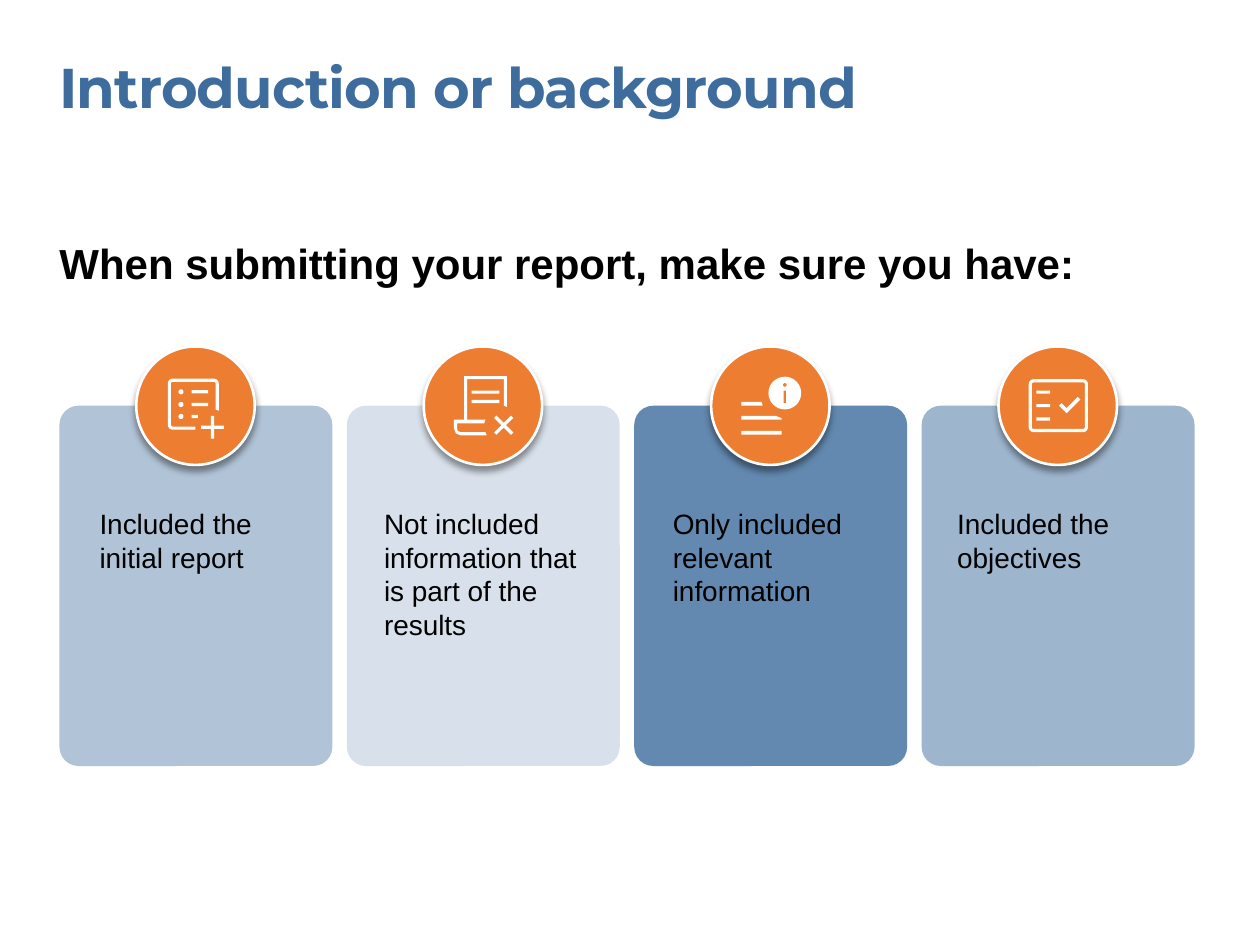
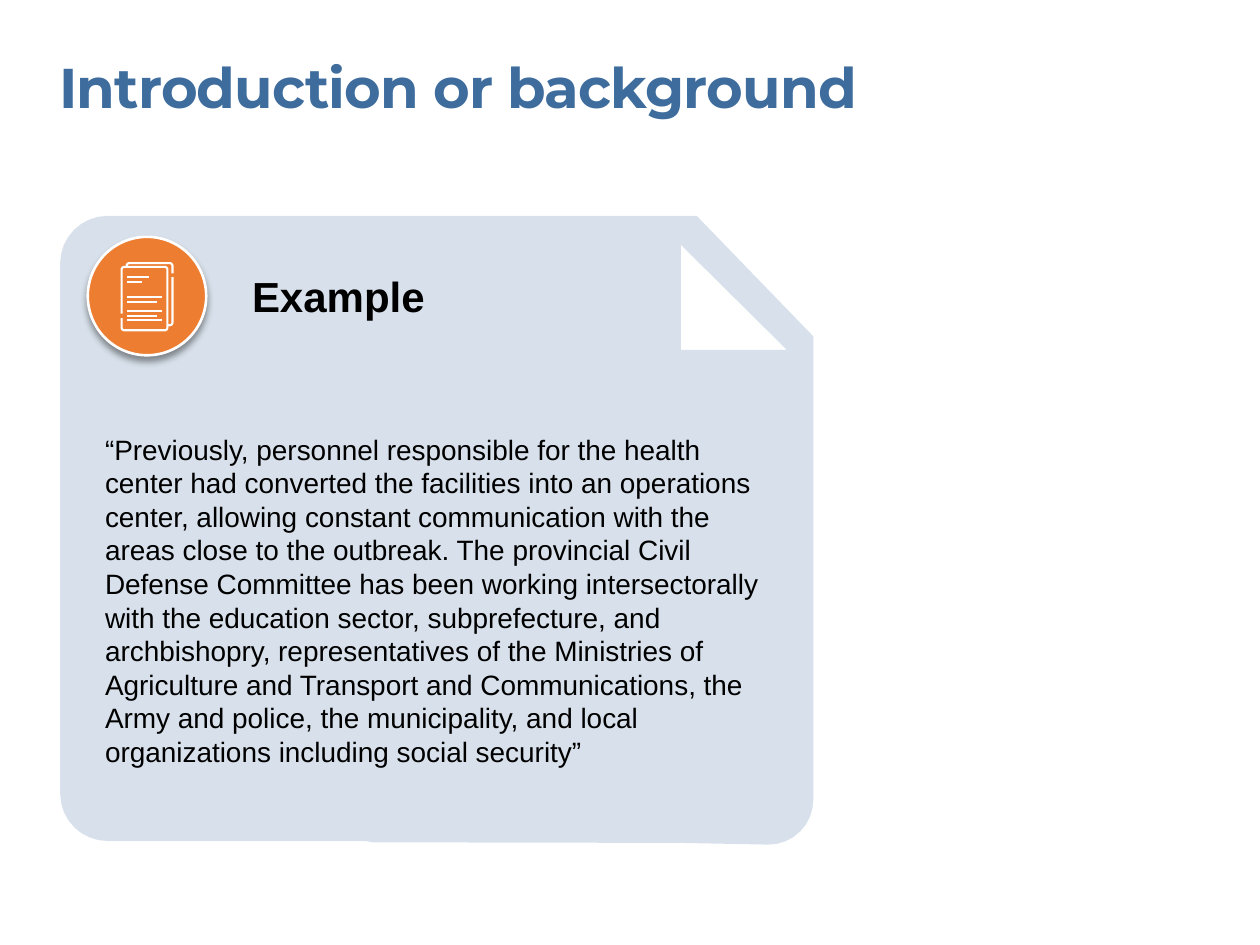
import math

import lxml.etree
import pptx
import pptx.dml.color
import pptx.enum.shapes
import pptx.oxml.ns
import pptx.util

BLUE = pptx.dml.color.RGBColor(0x3D, 0x6C, 0x9D)
ORANGE = pptx.dml.color.RGBColor(0xED, 0x7D, 0x31)
WHITE = pptx.dml.color.RGBColor(0xFF, 0xFF, 0xFF)
BLACK = pptx.dml.color.RGBColor(0x00, 0x00, 0x00)

COLUMNS = 100
MARGIN = 4.72
CARD_WIDTH = 21.66
CARD_PITCH = 22.81
CARD_TOP = 32.2
BADGE_SIZE = 9.4
BADGE_INDENT = 6.1
TITLE = "Introduction or background"
QUOTE = (
    "“Previously, personnel responsible for the health center had converted "
    "the facilities into an operations center, allowing constant communication "
    "with the areas close to the outbreak. The provincial Civil Defense "
    "Committee has been working intersectorally with the education sector, "
    "subprefecture, and archbishopry, representatives of the Ministries of "
    "Agriculture and Transport and Communications, the Army and police, the "
    "municipality, and local organizations including social security”"
)


def arc(x, y, radius, start, end, steps=8):
    angles = [math.radians(start + (end - start) * step / steps) for step in range(steps + 1)]
    return [(x + radius * math.cos(angle), y + radius * math.sin(angle)) for angle in angles]


def disc(x, y, radius):
    return arc(x, y, radius, 0, 360, 32)


def bar(left, top, right, bottom):
    return [(left, top), (right, top), (right, bottom), (left, bottom)]


def cross(x, y, arm, half, turn=0):
    corners = [(arm, -half), (arm, half), (half, half)]
    points = []
    for quarter in range(4):
        angle = math.radians(turn + 90 * quarter)
        cosine, sine = math.cos(angle), math.sin(angle)
        points += [(x + a * cosine - b * sine, y + a * sine + b * cosine) for a, b in corners]
    return points


def rounded(left, top, right, bottom, radius, first=0, count=4):
    centers = bar(left + radius, top + radius, right - radius, bottom - radius)
    points = []
    for number in range(first, first + count):
        start = 180 + 90 * number
        points += arc(*centers[number % 4], radius, start, start + 90)
    return points


def frame(left, top, right, bottom, radius, thickness, first=0, count=4, ends=None):
    outer = rounded(left, top, right, bottom, radius, first, count)
    inner = rounded(left + thickness, top + thickness, right - thickness,
                    bottom - thickness, radius - thickness, first, count)
    if ends is None:
        return [outer, inner]
    (outer_start, inner_start), (outer_end, inner_end) = ends
    return [[outer_start] + outer + [outer_end, inner_end] + inner[::-1] + [inner_start]]


def report_plus_icon():
    border = frame(2.5, 2.55, 6.55, 6.6, 0.4, 0.25, 3, 3,
                   (((4.7, 6.6), (4.7, 6.35)), ((6.55, 5.1), (6.3, 5.0))))
    dots = [disc(3.55, y, 0.2) for y in (3.6, 4.6, 5.55)]
    lines = [bar(4.4, y - 0.13, right, y + 0.13)
             for y, right in ((3.6, 5.7), (4.6, 5.7), (5.55, 4.9))]
    return border + dots + lines + [cross(6.05, 6.4, 0.9, 0.13)]


def scroll_cross_icon():
    scroll = [(2.4, 5.8), (3.2, 5.8), (3.2, 2.35), (6.6, 2.35), (6.6, 4.8), (6.35, 4.7),
              (6.35, 2.6), (3.45, 2.6), (3.45, 5.8), (4.9, 5.8), (4.8, 6.1),
              (2.65, 6.1), (2.65, 6.5), (2.7, 6.7), (2.9, 6.8), (4.9, 6.8),
              (5, 7.05), (2.9, 7.05), (2.55, 6.9), (2.4, 6.5)]
    lines = [bar(3.8, y, 6, y + 0.25) for y in (3.5, 4.25)]
    return [scroll, cross(6.35, 6.25, 0.95, 0.13, 45)] + lines


def information_icon():
    short_line = [(2.4, 4.4), (4, 4.4), (4.1, 4.7), (2.4, 4.7)]
    middle_line = [(2.4, 5.5), (5.1, 5.5), (5.6, 5.7), (5.6, 5.8), (2.4, 5.8)]
    return [short_line, middle_line, bar(2.4, 6.7, 5.6, 7),
            disc(5.85, 3.7, 1.3), disc(5.85, 3.05, 0.15), bar(5.75, 3.5, 5.95, 4.5)]


def checklist_icon():
    lines = [bar(3, y, 4.1, y + 0.25) for y in (3.5, 4.57, 5.63)]
    check = [(5.4, 5.3), (6.5, 4.2), (6.3, 4), (5.4, 4.9), (5, 4.5), (4.8, 4.7)]
    return frame(2.4, 2.6, 7.1, 6.8, 0.4, 0.25) + lines + [check]


def document_icon():
    front = frame(2.6, 2.3, 6.4, 7.5, 0.3, 0.17, 0, 4,
                  (((2.6, 6.1), (2.77, 6.1)), ((2.6, 6.45), (2.77, 6.45))))
    back = (3, 2, 6.8, 7.1, 0.3, 0.17)
    upper = frame(*back, 0, 2, (((3, 2.3), (3.17, 2.3)), ((6.8, 2.9), (6.63, 2.9))))
    lower = frame(*back, 2, 1, (((6.8, 3.2), (6.63, 3.2)), ((6.4, 7.1), (6.4, 6.93))))
    return front + upper + lower


def document_lines():
    widths = {3.12: 1.75, 3.53: 1.15, 4.71: 2.75, 5.08: 2.4, 5.82: 2.75, 6.2: 2.4, 6.55: 2.75}
    return [bar(3.13, y, 3.13 + width, y + 0.15) for y, width in widths.items()]


class Builder:
    def __init__(self):
        self.deck = pptx.Presentation()
        self.deck.slide_width = pptx.util.Inches(10)
        self.deck.slide_height = pptx.util.Inches(7.5)
        self.unit = self.deck.slide_width / COLUMNS
        self.page = None

    def lengths(self, *values):
        return [pptx.util.Emu(round(value * self.unit)) for value in values]

    def start_page(self):
        self.page = self.deck.slides.add_slide(self.deck.slide_layouts[6])
        title = self.text(TITLE, MARGIN, 4.2, 90.2, 5.4, 32, True, BLUE, "Montserrat")
        title.font._element.set("spc", "-50")

    def text(self, words, column, row, width, height, size=16, bold=False,
             color=BLACK, font="Arial"):
        box = self.page.shapes.add_textbox(*self.lengths(column, row, width, height))
        body = box.text_frame
        body.word_wrap = True
        body.margin_left = body.margin_top = body.margin_right = body.margin_bottom = 0
        body.text = words
        para = body.paragraphs[0]
        para.line_spacing = pptx.util.Pt(size * 1.2)
        span = para.runs[0]
        span.font.name = font
        span.font.size = pptx.util.Pt(size)
        span.font.bold = bold
        span.font.color.rgb = color
        return span

    def paint(self, shape, color, opacity=100):
        shape.shadow.inherit = False
        shape.fill.solid()
        shape.fill.fore_color.rgb = color
        shape.line.fill.background()
        if opacity < 100:
            tint = shape._element.spPr.find(".//" + pptx.oxml.ns.qn("a:srgbClr"))
            self.add_alpha(tint, opacity)

    def add_alpha(self, tint, opacity):
        lxml.etree.SubElement(tint, pptx.oxml.ns.qn("a:alpha"), val=str(opacity * 1000))

    def shape(self, kind, column, row, width, height, color, opacity=100):
        shape = self.page.shapes.add_shape(kind, *self.lengths(column, row, width, height))
        self.paint(shape, color, opacity)
        return shape

    def card(self, column, opacity):
        card = self.shape(pptx.enum.shapes.MSO_SHAPE.ROUNDED_RECTANGLE,
                          column, CARD_TOP, CARD_WIDTH, 28.6, BLUE, opacity)
        card.adjustments[0] = 0.07

    def outline(self, contours, column, row, color, opacity=100):
        builder = None
        for contour in contours:
            points = [self.lengths(column + x, row + y) for x, y in contour]
            if builder is None:
                builder = self.page.shapes.build_freeform(*points[0])
            else:
                builder.move_to(*points[0])
            builder.add_line_segments(points[1:], close=True)
        self.paint(builder.convert_to_shape(), color, opacity)

    def badge(self, column, row, icon, lines=()):
        circle = self.shape(pptx.enum.shapes.MSO_SHAPE.OVAL,
                            column, row, BADGE_SIZE, BADGE_SIZE, ORANGE)
        circle.line.color.rgb = WHITE
        circle.line.width = pptx.util.Pt(1.5)
        effects = circle._element.spPr.find(pptx.oxml.ns.qn("a:effectLst"))
        shadow = lxml.etree.SubElement(
            effects, pptx.oxml.ns.qn("a:outerShdw"), blurRad=str(pptx.util.Pt(4)),
            dist=str(pptx.util.Pt(3)), dir=str(90 * 60000), rotWithShape="0")
        tint = lxml.etree.SubElement(shadow, pptx.oxml.ns.qn("a:srgbClr"), val=str(BLACK))
        self.add_alpha(tint, 40)
        self.outline(icon, column, row, WHITE)
        for line in lines:
            self.outline([line], column, row, WHITE)


def add_checklist_page(builder):
    builder.start_page()
    builder.text("When submitting your report, make sure you have:",
                 MARGIN, 18.85, 90.1, 4, 24, True)
    cards = [
        ("Included the initial report", 40, 7.9, report_plus_icon()),
        ("Not included information that is part of the results", 20, 30.48, scroll_cross_icon()),
        ("Only included relevant information", 80, 53.4, information_icon()),
        ("Included the objectives", 50, 75.97, checklist_icon()),
    ]
    for number, (words, opacity, text_column, icon) in enumerate(cards):
        column = MARGIN + number * CARD_PITCH
        builder.card(column, opacity)
        builder.badge(column + BADGE_INDENT, CARD_TOP - BADGE_SIZE / 2, icon)
        builder.text(words, text_column, 40.2, 16.3, 10.8)


def add_example_page(builder):
    builder.start_page()
    fold = [(54.04, 19.43), (54.04, 27.77), (62.45, 27.77)]
    sheet = (arc(8.55, 20.9, 3.77, 180, 270) + [(55.3, 17.13), (64.55, 26.7)]
             + arc(61, 63.48, 3.55, 0, 90) + [(54, 66.9), (29.6, 66.85), (29, 66.75)]
             + arc(8.55, 62.98, 3.77, 90, 180))
    builder.outline([fold, sheet], 0, 0, BLUE, 20)
    builder.text("Example", 20, 21.5, 20.9, 4, 24, True)
    builder.text(QUOTE, 8.34, 34.3, 52.6, 26.9)
    builder.badge(6.97, 18.8, document_icon(), document_lines())


def main():
    builder = Builder()
    add_checklist_page(builder)
    add_example_page(builder)
    builder.deck.save("out.pptx")


if __name__ == "__main__":
    main()
